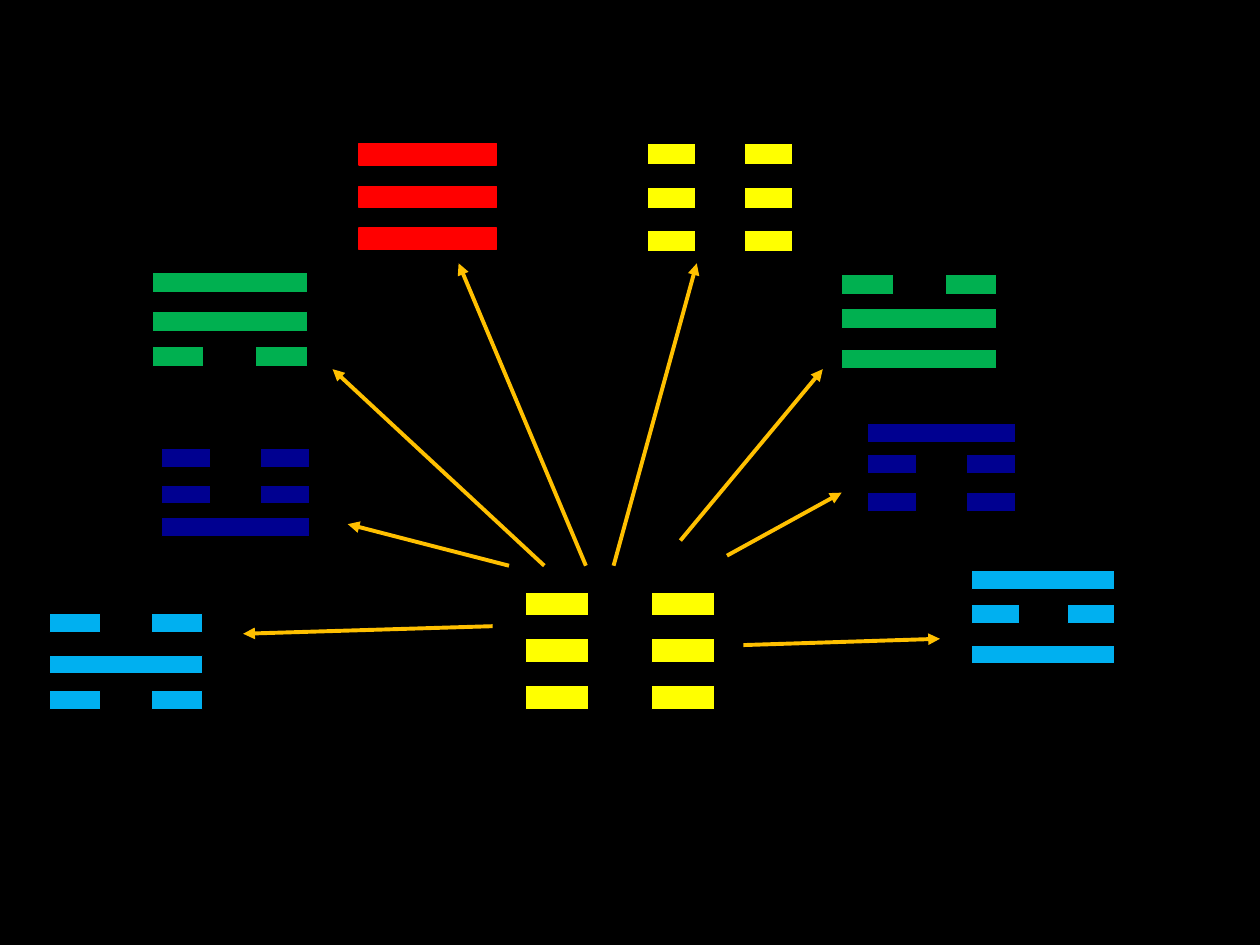
import pptx
import pptx.dml.color
import pptx.enum.shapes
import pptx.oxml.ns
import pptx.util
from lxml import etree

Inches = pptx.util.Inches
RGBColor = pptx.dml.color.RGBColor
SHAPE = pptx.enum.shapes.MSO_SHAPE
LINK = pptx.enum.shapes.MSO_CONNECTOR

BLACK = RGBColor(0x00, 0x00, 0x00)
YELLOW = RGBColor(0xFF, 0xFF, 0x00)
RED = RGBColor(0xFF, 0x00, 0x00)
GREEN = RGBColor(0x00, 0xB0, 0x50)
NAVY = RGBColor(0x00, 0x00, 0x90)
BLUE = RGBColor(0x00, 0xB0, 0xF0)
GOLD = RGBColor(0xFF, 0xC0, 0x00)

SOLID, SPLIT = "solid", "split"

CENTER = (4.17, 4.7, 1.5, 0.19, YELLOW, BLACK,
          [(0, SPLIT), (0.37, SPLIT), (0.74, SPLIT)])
OUTER = [
    (2.85, 1.14, 1.09, 0.17, RED, RED,
     [(0, SOLID), (0.34, SOLID), (0.67, SOLID)]),
    (5.14, 1.14, 1.15, 0.17, YELLOW, BLACK,
     [(0, SPLIT), (0.35, SPLIT), (0.69, SPLIT)]),
    (6.68, 2.18, 1.23, 0.16, GREEN, BLACK,
     [(0, SPLIT), (0.27, SOLID), (0.59, SOLID)]),
    (1.21, 2.16, 1.23, 0.16, GREEN, BLACK,
     [(0, SOLID), (0.31, SOLID), (0.59, SPLIT)]),
    (6.88, 3.36, 1.18, 0.15, NAVY, BLACK,
     [(0, SOLID), (0.25, SPLIT), (0.55, SPLIT)]),
    (1.28, 3.56, 1.18, 0.15, NAVY, BLACK,
     [(0, SPLIT), (0.29, SPLIT), (0.55, SOLID)]),
    (7.71, 4.53, 1.14, 0.15, BLUE, BLACK,
     [(0, SOLID), (0.27, SPLIT), (0.59, SOLID)]),
    (0.39, 4.87, 1.22, 0.15, BLUE, BLACK,
     [(0, SPLIT), (0.33, SOLID), (0.61, SPLIT)]),
]
RAYS = [
    ((3.91, 4.97), (1.93, 5.03)),
    ((5.9, 5.12), (7.46, 5.07)),
    ((5.77, 4.41), (6.68, 3.91)),
    ((4.04, 4.49), (2.76, 4.16)),
    ((5.4, 4.29), (6.53, 2.93)),
    ((4.32, 4.49), (2.64, 2.93)),
    ((4.87, 4.49), (5.53, 2.09)),
    ((4.65, 4.49), (3.64, 2.09)),
]


def paint(fill, color):
    fill.solid()
    fill.fore_color.rgb = color


def style(part, form):
    for name, value in form.items():
        setattr(part, name, value)


def draw_bar(group, left, top, width, height, color, edge):
    bar = group.shapes.add_shape(
        SHAPE.RECTANGLE, Inches(left), Inches(top), Inches(width), Inches(height))
    style(bar.shadow, {"inherit": False})
    paint(bar.fill, color)
    paint(bar.line.fill, edge)
    style(bar.line, {"width": pptx.util.Pt(0.75)})


def draw_sign(slide, left, top, width, height, color, edge, rows):
    group = slide.shapes.add_group_shape()
    third = width / 3
    for drop, kind in rows:
        parts = [(0, width)] if kind == SOLID else [(0, third), (2 * third, third)]
        for shift, span in parts:
            draw_bar(group, left + shift, top + drop, span, height, color, edge)


def draw_rays(slide, rays):
    group = slide.shapes.add_group_shape()
    for start, end in rays:
        ray = group.shapes.add_connector(
            LINK.STRAIGHT, *(Inches(value) for value in start + end))
        paint(ray.line.fill, GOLD)
        style(ray.line, {"width": pptx.util.Pt(2.25)})
        props = ray._element.spPr
        edge = props.find(pptx.oxml.ns.qn("a:ln"))
        etree.SubElement(edge, pptx.oxml.ns.qn("a:tailEnd"), type="triangle")
        etree.SubElement(props, pptx.oxml.ns.qn("a:effectLst"))


def main():
    deck = pptx.Presentation()
    style(deck, {"slide_width": Inches(10), "slide_height": Inches(7.5)})
    slide = deck.slides.add_slide(deck.slide_layouts[6])
    paint(slide.background.fill, BLACK)
    draw_sign(slide, *CENTER)
    draw_rays(slide, RAYS)
    for sign in OUTER:
        draw_sign(slide, *sign)
    deck.save("out.pptx")


if __name__ == "__main__":
    main()
